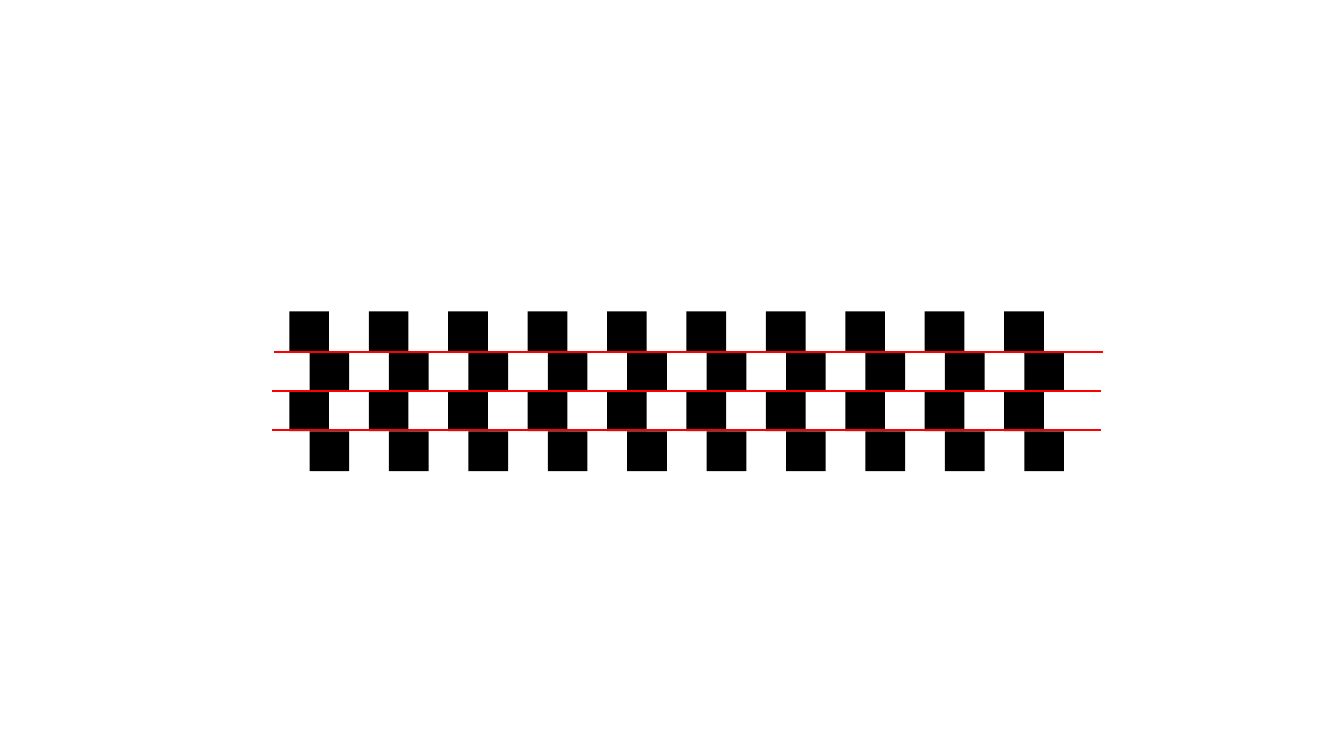
from lxml.etree import SubElement
from pptx import Presentation
from pptx.dml.color import RGBColor
from pptx.enum.shapes import MSO_CONNECTOR as Connector, MSO_SHAPE as Shape
from pptx.oxml.ns import qn
from pptx.util import Inches, Pt

BLACK = RGBColor(0, 0, 0)
RED = RGBColor(255, 0, 0)

COLUMNS = 10
ROW_LEFTS = [2.87, 3.07, 2.87, 3.07]
FIRST_TOP = 3.09
PITCH = 7.09 / (COLUMNS - 1)
SIDE = PITCH / 2
ROW_STEP = 1.19 / (len(ROW_LEFTS) - 1)
LINE_LENGTH = 8.22
LINES = [(2.72, 3.49), (2.7, 3.88), (2.7, 4.27)]
LINE_FORMAT = {"width": Pt(1.5)}


def add_square(shapes, left, top):
    square = shapes.add_shape(
        Shape.RECTANGLE, Inches(left), Inches(top), Inches(SIDE), Inches(SIDE)
    )
    square.shadow.inherit = False
    square.fill.solid()
    square.fill.fore_color.rgb = BLACK
    square.line.fill.background()


def add_red_line(shapes, left, height):
    rule = shapes.add_connector(
        Connector.STRAIGHT,
        Inches(left), Inches(height), Inches(left + LINE_LENGTH), Inches(height),
    )
    rule.line.color.rgb = RED
    for name, value in LINE_FORMAT.items():
        setattr(rule.line, name, value)
    SubElement(rule._element.spPr, qn("a:effectLst"))


def main():
    deck = Presentation()
    deck.slide_width, deck.slide_height = Inches(13.33), Inches(7.5)
    page = deck.slides.add_slide(deck.slide_layouts[6])
    illusion = page.shapes.add_group_shape().shapes
    for column in range(COLUMNS):
        for row, row_left in enumerate(ROW_LEFTS):
            add_square(illusion, row_left + column * PITCH, FIRST_TOP + row * ROW_STEP)
    for left, height in LINES:
        add_red_line(illusion, left, height)
    deck.save("out.pptx")


if __name__ == "__main__":
    main()
